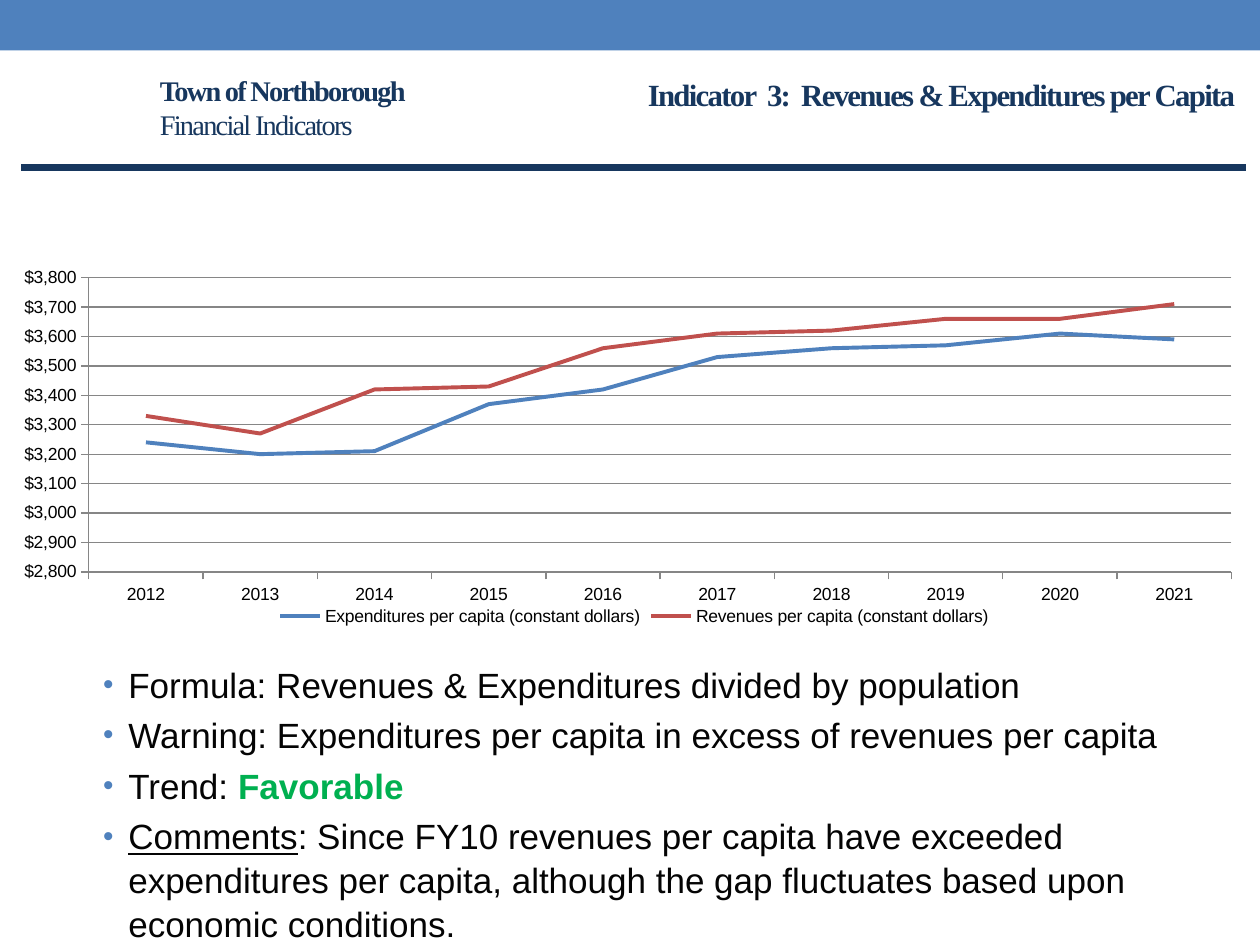
from lxml.etree import SubElement
from pptx import Presentation
from pptx.chart.data import CategoryChartData
from pptx.dml.color import RGBColor
from pptx.enum.chart import XL_CHART_TYPE, XL_LEGEND_POSITION, XL_TICK_MARK
from pptx.enum.shapes import MSO_CONNECTOR, MSO_SHAPE
from pptx.enum.text import MSO_ANCHOR, PP_ALIGN
from pptx.oxml import parse_xml
from pptx.oxml.ns import nsdecls, qn
from pptx.util import Inches, Pt

BLUE = RGBColor(0x4F, 0x81, 0xBD)
RED = RGBColor(0xC0, 0x50, 0x4D)
NAVY = RGBColor(0x17, 0x37, 0x5E)
GREEN = RGBColor(0x00, 0xB0, 0x50)
INK = RGBColor(0x04, 0x04, 0x04)
BLACK = RGBColor(0x00, 0x00, 0x00)
GRAY = RGBColor(0x86, 0x86, 0x86)

YEARS = [str(year) for year in range(2012, 2022)]
SERIES = [
    ("Expenditures per capita (constant dollars)", BLUE,
     [3240, 3200, 3210, 3370, 3420, 3530, 3560, 3570, 3610, 3590]),
    ("Revenues per capita (constant dollars)", RED,
     [3330, 3270, 3420, 3430, 3560, 3610, 3620, 3660, 3660, 3710]),
]
PLOT_AREA = {"x": 0.055, "y": 0.182, "w": 0.932, "h": 0.681}
BULLETS = [
    [("Formula: Revenues & Expenditures divided by population", {})],
    [("Warning: Expenditures per capita in excess of revenues per capita", {})],
    [("Trend: ", {}), ("Favorable", {"color": GREEN, "bold": True})],
    [("Comments", {"underline": True}),
     (": Since FY10 revenues per capita have exceeded expenditures per capita, "
      "although the gap fluctuates based upon economic conditions.", {})],
]


def add_run(paragraph, text, size, name, color, bold=False, underline=False, spacing=0):
    run = paragraph.add_run()
    run.text = text
    font = run.font
    font.size, font.name, font.bold = Pt(size), name, bold
    font.color.rgb = color
    if underline:
        font.underline = True
    if spacing:
        run._r.get_or_add_rPr().set("spc", str(spacing * 100))


def add_text_frame(slide, left, top, width, height, anchor=MSO_ANCHOR.TOP):
    box = slide.shapes.add_textbox(Inches(left), Inches(top), Inches(width), Inches(height))
    text_frame = box.text_frame
    text_frame.word_wrap = True
    text_frame.vertical_anchor = anchor
    return text_frame


def add_heading(slide, bounds, lines, size, alignment):
    paragraph = add_text_frame(slide, *bounds, MSO_ANCHOR.MIDDLE).paragraphs[0]
    paragraph.alignment = alignment
    for index, (text, bold) in enumerate(lines):
        if index:
            paragraph.add_line_break()
        add_run(paragraph, text, size, "Times New Roman", NAVY, bold, spacing=-1)


def add_band(slide):
    band = slide.shapes.add_shape(MSO_SHAPE.RECTANGLE, 0, 0, Inches(10), Inches(0.4))
    band.shadow.inherit = False
    band.fill.solid()
    band.fill.fore_color.rgb = BLUE
    band.line.fill.background()


def add_rule(slide):
    rule = slide.shapes.add_connector(
        MSO_CONNECTOR.STRAIGHT, Inches(0.17), Inches(1.33), Inches(9.89), Inches(1.33))
    rule.line.color.rgb = NAVY
    rule.line.width = Pt(4.25)
    SubElement(rule._element.spPr, qn("a:effectLst"))


def set_bullet(paragraph):
    properties = paragraph._p.get_or_add_pPr()
    properties.set("marL", str(Inches(0.5)))
    properties.set("indent", str(Inches(-0.2)))
    color = SubElement(properties, qn("a:buClr"))
    SubElement(color, qn("a:srgbClr")).set("val", str(BLUE))
    SubElement(properties, qn("a:buSzPct")).set("val", "85000")
    SubElement(properties, qn("a:buFont")).set("typeface", "Arial")
    SubElement(properties, qn("a:buChar")).set("char", "•")


def add_bullets(slide):
    text_frame = add_text_frame(slide, 0.42, 5.2, 9, 2.3)
    for index, runs in enumerate(BULLETS):
        paragraph = text_frame.add_paragraph() if index else text_frame.paragraphs[0]
        paragraph.space_before = Pt(4)
        paragraph.line_spacing = 1.04
        set_bullet(paragraph)
        for text, style in runs:
            add_run(paragraph, text, 20, "Arial", **{"color": INK, **style})


def set_plot_layout(chart):
    plot_area = chart._chartSpace.chart.plotArea
    for layout in plot_area.findall(qn("c:layout")):
        plot_area.remove(layout)
    modes = '<c:xMode val="edge"/><c:yMode val="edge"/>'
    sizes = "".join(f'<c:{key} val="{value}"/>' for key, value in PLOT_AREA.items())
    plot_area.insert(0, parse_xml(
        f'<c:layout {nsdecls("c")}><c:manualLayout><c:layoutTarget val="inner"/>'
        f"{modes}{sizes}</c:manualLayout></c:layout>"))


def format_axes(chart):
    value_axis = chart.value_axis
    value_axis.minimum_scale, value_axis.maximum_scale = 2800, 3800
    value_axis.major_unit = 100
    value_axis.has_major_gridlines = True
    value_axis.major_gridlines.format.line.color.rgb = GRAY
    value_axis.tick_labels.number_format = '"$"#,##0'
    value_axis.tick_labels.number_format_is_linked = False
    for axis in (value_axis, chart.category_axis):
        axis.major_tick_mark = XL_TICK_MARK.OUTSIDE
        axis.format.line.color.rgb = GRAY


def add_line_chart(slide):
    data = CategoryChartData()
    data.categories = YEARS
    for name, _, values in SERIES:
        data.add_series(name, values)
    chart = slide.shapes.add_chart(
        XL_CHART_TYPE.LINE, Inches(0.17), Inches(1.58), Inches(9.73), Inches(3.43), data).chart
    chart.has_title = False
    chart.font.size, chart.font.name = Pt(10), "Arial"
    chart.font.color.rgb = BLACK
    chart.has_legend = True
    chart.legend.position = XL_LEGEND_POSITION.BOTTOM
    chart.legend.include_in_layout = False
    chart.plots[0].vary_by_categories = False
    for series, (_, color, _) in zip(chart.plots[0].series, SERIES):
        series.smooth = False
        series.format.line.color.rgb = color
        series.format.line.width = Pt(2.25)
    format_axes(chart)
    set_plot_layout(chart)


def main():
    """Build the revenues and expenditures per capita slide."""
    presentation = Presentation()
    presentation.slide_width, presentation.slide_height = Inches(10), Inches(7.5)
    slide = presentation.slides.add_slide(presentation.slide_layouts[6])
    add_band(slide)
    add_heading(slide, (1.17, 0.56, 2.2, 0.58),
                [("Town of Northborough", True), ("Financial Indicators", False)],
                16.2, PP_ALIGN.LEFT)
    add_bullets(slide)
    add_heading(slide, (4.67, 0.42, 5.23, 0.66),
                [("Indicator  3:  Revenues & Expenditures per Capita", True)],
                17.6, PP_ALIGN.RIGHT)
    add_rule(slide)
    add_line_chart(slide)
    presentation.save("out.pptx")


if __name__ == "__main__":
    main()
